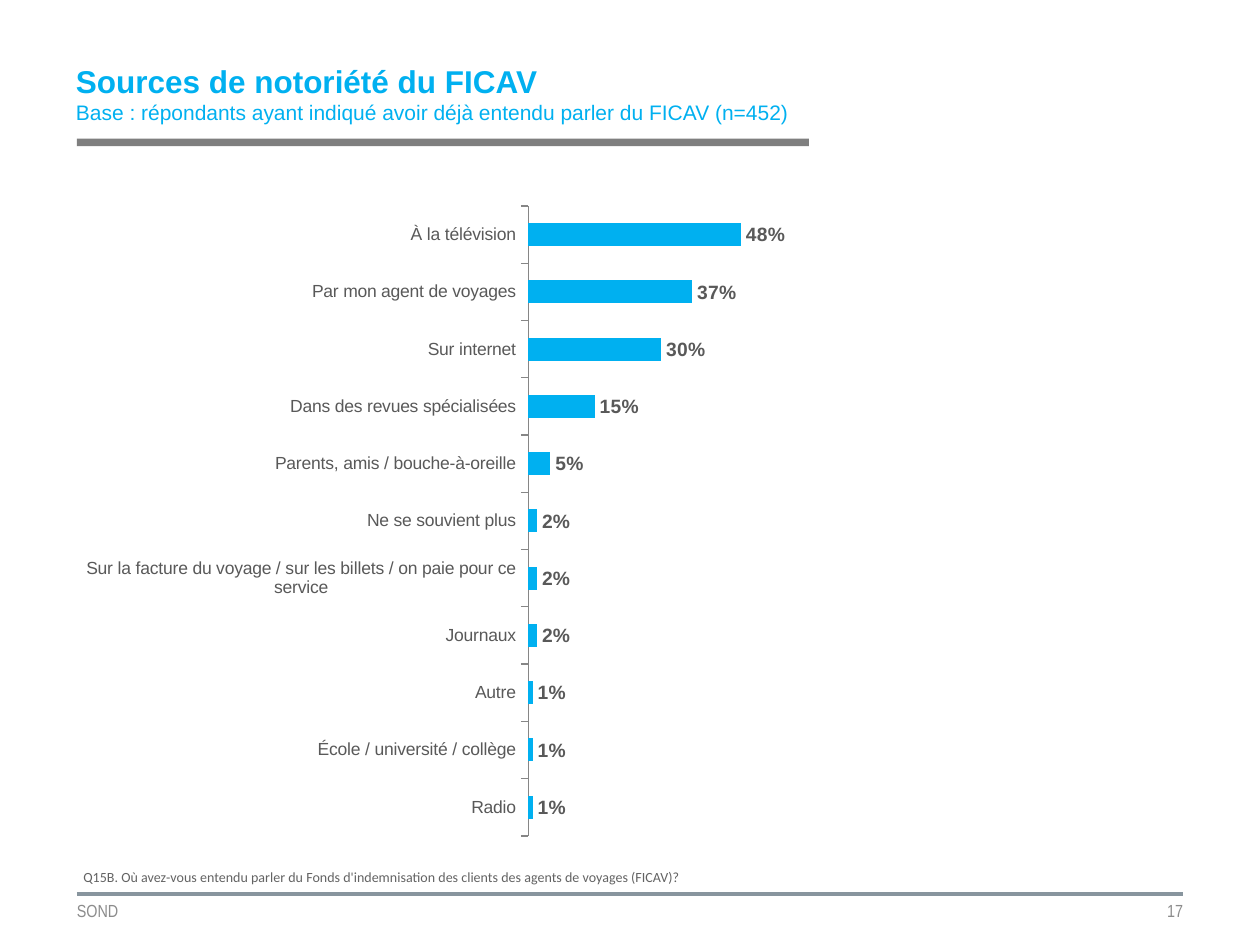
from dataclasses import dataclass

from pptx import Presentation
from pptx.chart.data import CategoryChartData
from pptx.dml.color import RGBColor
from pptx.enum.chart import XL_CHART_TYPE, XL_LABEL_POSITION, XL_TICK_MARK
from pptx.enum.shapes import MSO_CONNECTOR, MSO_SHAPE
from pptx.enum.text import MSO_ANCHOR, MSO_AUTO_SIZE, PP_ALIGN
from pptx.oxml import parse_xml
from pptx.oxml.ns import nsdecls, qn
from pptx.util import Pt


@dataclass(frozen=True)
class Theme:
    accent: str = "00B0F0"
    bar: str = "7F7F7F"
    rule: str = "88959E"
    footer: str = "8C8C8C"
    note: str = "636363"
    chart_text: str = "595959"
    axis: str = "868686"
    sans: str = "Arial"
    narrow: str = "Arial Narrow"
    body: str = "Calibri"
    title_size: int = 18
    subtitle_size: int = 12
    label_size: int = 11
    small_size: int = 10
    note_size: int = 8


T = Theme()

SOURCES = [
    ("Radio", 0.01),
    ("École / université / collège", 0.01),
    ("Autre", 0.01),
    ("Journaux", 0.02),
    ("Sur la facture du voyage / sur les billets / on paie pour ce service", 0.02),
    ("Ne se souvient plus", 0.02),
    ("Parents, amis / bouche-à-oreille", 0.05),
    ("Dans des revues spécialisées", 0.15),
    ("Sur internet", 0.30),
    ("Par mon agent de voyages", 0.37),
    ("À la télévision", 0.48),
]


def rgb(value):
    return RGBColor.from_string(value)


def style_font(font, name, size, color, bold=False):
    font.name, font.size, font.bold = name, Pt(size), bold
    font.color.rgb = rgb(color)


def set_frame(tf, anchor=MSO_ANCHOR.MIDDLE):
    tf.word_wrap = True
    tf.auto_size = MSO_AUTO_SIZE.NONE
    tf.vertical_anchor = anchor
    tf.margin_left = tf.margin_right = tf.margin_top = tf.margin_bottom = 0


def add_text(s, box, text, font, size, color, align=PP_ALIGN.LEFT):
    tf = s.shapes.add_textbox(*map(Pt, box)).text_frame
    set_frame(tf)
    p = tf.paragraphs[0]
    p.text, p.alignment = text, align
    style_font(p.runs[0].font, font, size, color)


def add_heading(s, x, y, w, h, lines):
    """Two-line title with a grey bar below it."""
    sp = s.shapes.title
    sp.left, sp.top, sp.width, sp.height = map(Pt, (x, y, w, h))
    tf = sp.text_frame
    set_frame(tf)
    tf.text = "\n".join(lines)
    for p, size, bold in zip(tf.paragraphs, (T.title_size, T.subtitle_size), (True, False)):
        p.alignment = PP_ALIGN.LEFT
        style_font(p.runs[0].font, T.sans, size, T.accent, bold)

    bar = s.shapes.add_shape(MSO_SHAPE.RECTANGLE, Pt(x + 0.6), Pt(y + h + 4.3), Pt(418.3), Pt(4.4))
    bar.shadow.inherit = False
    bar.fill.solid()
    bar.fill.fore_color.rgb = rgb(T.bar)
    bar.line.fill.background()


def set_plot_area(chart, x, y, w, h):
    """Fix the inner plot area, as fractions of the chart."""
    area = chart._chartSpace.chart.plotArea
    for old in area.findall(qn("c:layout")):
        area.remove(old)
    sizes = "".join(f'<c:{k} val="{v}"/>' for k, v in zip("xywh", (x, y, w, h)))
    area.insert(0, parse_xml(
        f'<c:layout {nsdecls("c")}><c:manualLayout><c:layoutTarget val="inner"/>'
        f'<c:xMode val="edge"/><c:yMode val="edge"/>{sizes}</c:manualLayout></c:layout>'))


def add_sources_chart(s, x, y, w, h, rows):
    """Horizontal bars, one for each source of awareness."""
    data = CategoryChartData(number_format="0%")
    data.categories = [name for name, _ in rows]
    data.add_series("Series 1", [share for _, share in rows])
    chart = s.shapes.add_chart(
        XL_CHART_TYPE.BAR_CLUSTERED, Pt(x), Pt(y), Pt(w), Pt(h), data).chart
    chart.has_legend = chart.has_title = False
    style_font(chart.font, T.body, T.title_size, "000000")
    set_plot_area(chart, 0.62, 0.02, 0.36, 0.96)

    # Axes
    cat = chart.category_axis
    cat.major_tick_mark = XL_TICK_MARK.OUTSIDE
    cat.has_major_gridlines = False
    cat.format.line.color.rgb = rgb(T.axis)
    style_font(cat.tick_labels.font, T.sans, T.small_size, T.chart_text)
    val = chart.value_axis
    val.visible = val.has_major_gridlines = False
    val.minimum_scale, val.maximum_scale = 0, 0.6
    val.tick_labels.number_format = "0%"
    val.tick_labels.number_format_is_linked = False

    # Bars and their labels
    plot = chart.plots[0]
    plot.gap_width, plot.vary_by_categories = 150, False
    fill = plot.series[0].format.fill
    fill.solid()
    fill.fore_color.rgb = rgb(T.accent)
    labels = plot.series[0].data_labels
    labels.show_value = True
    labels.position = XL_LABEL_POSITION.OUTSIDE_END
    labels.number_format, labels.number_format_is_linked = "0%", False
    style_font(labels.font, T.sans, T.label_size, T.chart_text, True)


def add_footer(s, x, y, w, h, note, owner, number):
    """Question above the rule, owner and page number below it."""
    add_text(s, (x + 3.6, y - 18, w - 8, 16.5), note, T.body, T.note_size, T.note)
    rule = s.shapes.add_connector(MSO_CONNECTOR.STRAIGHT, Pt(x), Pt(y), Pt(x + w), Pt(y))
    rule.line.color.rgb, rule.line.width = rgb(T.rule), Pt(2.25)
    rule._element.spPr.append(parse_xml(f'<a:effectLst {nsdecls("a")}/>'))
    half = w / 2
    add_text(s, (x, y, half, h), owner, T.narrow, T.small_size, T.footer)
    add_text(s, (x + half, y, half, h), number, T.narrow, T.small_size, T.footer, PP_ALIGN.RIGHT)


def main():
    prs = Presentation()
    prs.slide_width, prs.slide_height = Pt(720), Pt(540)
    s = prs.slides.add_slide(prs.slide_layouts.get_by_name("Title Only"))
    add_heading(s, 43.4, 31.7, 481, 43.2, [
        "Sources de notoriété du FICAV",
        "Base : répondants ayant indiqué avoir déjà entendu parler du FICAV (n=452)"])
    add_sources_chart(s, 40.3, 110.2, 422, 375, SOURCES)
    add_footer(
        s, 44, 510.8, 632, 18.7,
        "Q15B. Où avez-vous entendu parler du Fonds d'indemnisation des clients "
        "des agents de voyages (FICAV)?", "SOND", "17")
    prs.save("out.pptx")


if __name__ == "__main__":
    main()
